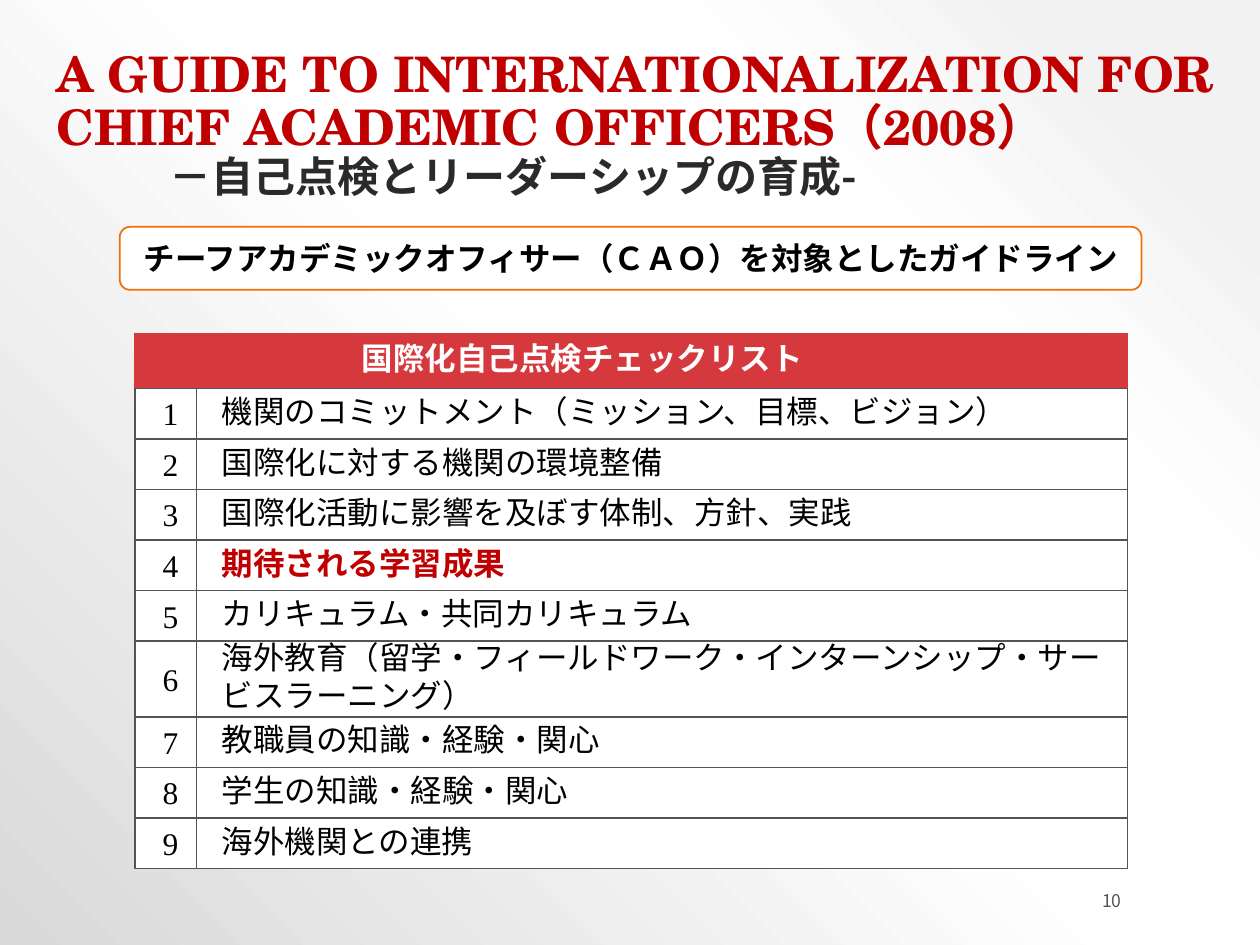
from pptx import Presentation, oxml, util as u
from pptx.dml import color
from pptx.enum import shapes, text
from pptx.oxml import ns

JP, SERIF, NUM = "Noto Sans CJK JP", "TeX Gyre Schola", "Times New Roman"
RED, HEAD, GREY, WHITE, BLACK = "C00000", "D5393D", "545454", "FFFFFF", "000000"


def paint(target, hex_color):
    target.solid()
    target.fore_color.rgb = color.RGBColor.from_string(hex_color)


def write(p, content, size=18, font=JP, hex_color=BLACK, bold=False,
          align="LEFT", indent=0, spacing=None, before=0):
    p.alignment = getattr(text.PP_ALIGN, align)
    p.line_spacing = spacing
    p.space_before = u.Pt(before)
    p._p.get_or_add_pPr().set("marL", str(u.Inches(indent)))
    r = p.add_run()
    r.text = content
    r.font.size, r.font.name, r.font.bold = u.Pt(size), font, bold
    paint(r.font.fill, hex_color)
    r._r.get_or_add_rPr().find(ns.qn("a:latin")).addnext(
        oxml.parse_xml(f'<a:ea {ns.nsdecls("a")} typeface="{JP}"/>'))


prs = Presentation()
prs.slide_width, prs.slide_height = u.Inches(10), u.Inches(7.5)
W, H = prs.slide_width / 100, prs.slide_height / 100
s = prs.slides.add_slide(prs.slide_layouts[6])

stops = "".join(
    f'<a:gs pos="{pos}000"><a:srgbClr val="{c}"/></a:gs>'
    for pos, c in [(10, "F2F2F2"), (28, WHITE), (48, WHITE), (100, "D9D9D9")])
s._element.cSld.insert(0, oxml.parse_xml(
    f'<p:bg {ns.nsdecls("p", "a")}><p:bgPr><a:gradFill rotWithShape="1">'
    f'<a:gsLst>{stops}</a:gsLst><a:path path="circle">'
    '<a:fillToRect l="100000" b="100000"/></a:path></a:gradFill>'
    '<a:effectLst/></p:bgPr></p:bg>'))

sp = s.shapes.add_textbox(*map(int, (3.5 * W, 0.27 * H, 94.9 * W, 21.73 * H)))
tf = sp.text_frame
tf.word_wrap, tf.vertical_anchor = True, text.MSO_ANCHOR.BOTTOM
write(tf.paragraphs[0],
      "A GUIDE TO INTERNATIONALIZATION FOR CHIEF ACADEMIC OFFICERS（2008）",
      size=28, font=SERIF, hex_color=RED, bold=True, spacing=0.9)
write(tf.add_paragraph(), "－自己点検とリーダーシップの育成-",
      size=24, hex_color="2A2A2A", bold=True, indent=0.9, spacing=0.9)

items = [
    "機関のコミットメント（ミッション、目標、ビジョン）",
    "国際化に対する機関の環境整備",
    "国際化活動に影響を及ぼす体制、方針、実践",
    "期待される学習成果",
    "カリキュラム・共同カリキュラム",
    "海外教育（留学・フィールドワーク・インターンシップ・サービスラーニング）",
    "教職員の知識・経験・関心",
    "学生の知識・経験・関心",
    "海外機関との連携",
]
cols = [4.9 * W, 73.9 * W]
rows = [5.8 * H] + [8 * H if n == 6 else 5.35 * H for n in range(1, 10)]
table = s.shapes.add_table(len(rows), 2, *map(int, (
    10.7 * W, 35.3 * H, sum(cols), sum(rows)))).table
table.first_row = table.horz_banding = False
for column, width in zip(table.columns, cols):
    column.width = int(width)
for row, height in zip(table.rows, rows):
    row.height = int(height)

for i, row in enumerate(table.rows):
    for j, cell in enumerate(row.cells):
        cell.vertical_anchor = text.MSO_ANCHOR.MIDDLE
        cell.margin_left = cell.margin_right = u.Inches(0.08 if i and j else 0.1)
        cell.margin_top = cell.margin_bottom = u.Inches(0 if i and j else 0.05)
        for side in "LRTB":
            edge = GREY if i or side == "B" else HEAD
            cell._tc.get_or_add_tcPr().append(oxml.parse_xml(
                f'<a:ln{side} {ns.nsdecls("a")} w="{u.Pt(1)}"><a:solidFill>'
                f'<a:srgbClr val="{edge}"/></a:solidFill></a:ln{side}>'))
        paint(cell.fill, WHITE if i else HEAD)
        if i:
            key = j == 1 and i == 4
            write(cell.text_frame.paragraphs[0], items[i - 1] if j else str(i),
                  font=JP if j else NUM, hex_color=RED if key else BLACK,
                  bold=key, indent=0.12, spacing=u.Pt(21.6), before=12)

table.cell(0, 0).merge(table.cell(0, 1))
write(table.cell(0, 0).text_frame.paragraphs[0], "国際化自己点検チェックリスト",
      hex_color=WHITE, bold=True, indent=1.7, spacing=u.Pt(21.6))

sp = s.shapes.add_textbox(*map(int, (80.6 * W, 94 * H, 9.4 * W, 2.67 * H)))
tf = sp.text_frame
tf.word_wrap, tf.vertical_anchor = True, text.MSO_ANCHOR.MIDDLE
write(tf.paragraphs[0], "10", size=10, hex_color=GREY, align="RIGHT")

sp = s.shapes.add_shape(shapes.MSO_SHAPE.ROUNDED_RECTANGLE, *map(int, (
    9.5 * W, 24 * H, 81.1 * W, 6.67 * H)))
sp.shadow.inherit = False
paint(sp.fill, WHITE)
paint(sp.line.fill, "EE7008")
sp.line.width = u.Pt(1)
tf = sp.text_frame
tf.word_wrap, tf.vertical_anchor = True, text.MSO_ANCHOR.MIDDLE
write(tf.paragraphs[0], "チーフアカデミックオフィサー（ＣＡＯ）を対象としたガイドライン",
      bold=True, align="CENTER")

prs.save("out.pptx")
